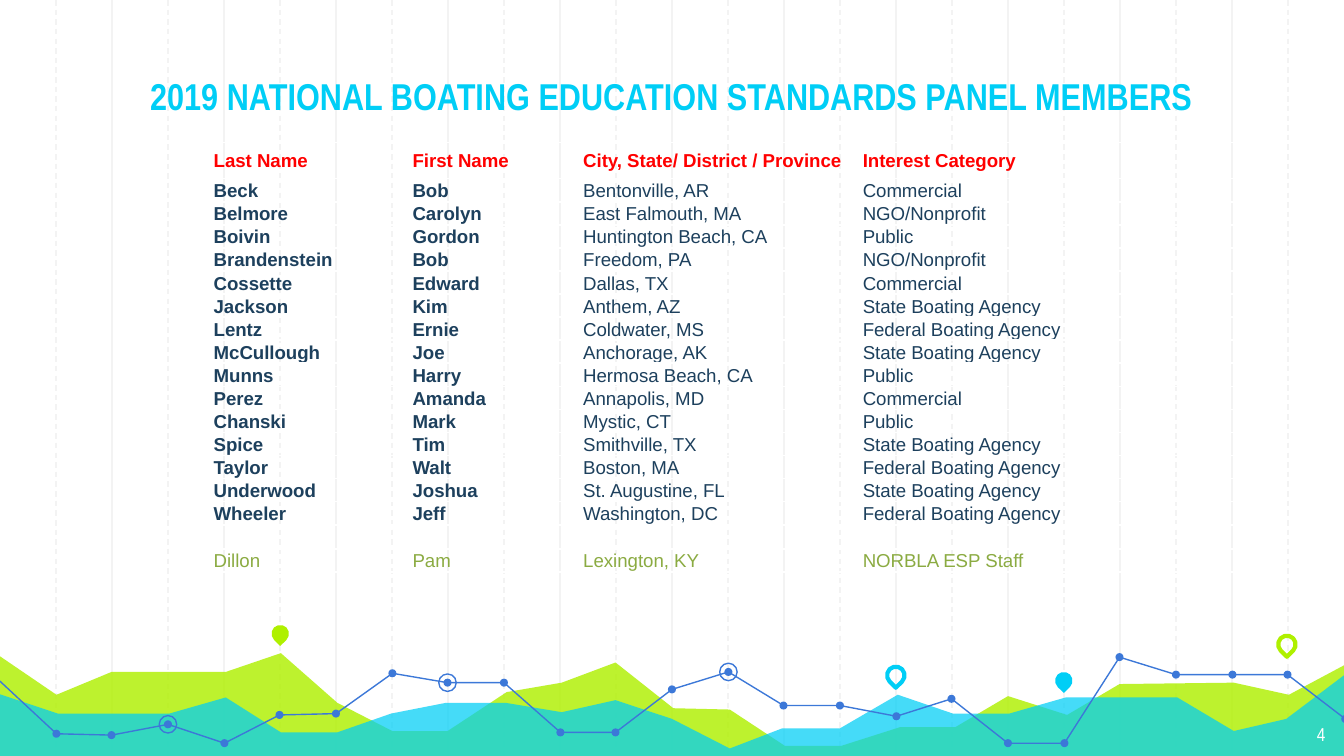
from dataclasses import dataclass

from lxml import etree
from pptx import Presentation
from pptx import util as u
from pptx.dml.color import RGBColor
from pptx.enum import dml, shapes, text
from pptx.oxml.ns import qn


@dataclass(frozen=True)
class Theme:
    cyan: str = "00CEF6"
    lime: str = "AFF000"
    blue: str = "3C78D8"
    grid: str = "F3F3F3"
    white: str = "FFFFFF"
    heading: str = "FF0000"
    member: str = "1D405D"
    staff: str = "8BAB42"
    display_font: str = "Arial Narrow"
    table_font: str = "Arial"
    title_size: int = 20
    small_size: int = 10


theme = Theme()


def paint(shape, fill=None, line=None, width=0.75, alpha=None):
    shape.shadow.inherit = False
    if fill:
        shape.fill.solid()
        shape.fill.fore_color.rgb = RGBColor.from_string(fill)
        if alpha:
            color = shape.fill._xPr.find(qn("a:solidFill"))[0]
            etree.SubElement(color, qn("a:alpha")).set("val", str(alpha * 1000))
    else:
        shape.fill.background()
    if line:
        shape.line.color.rgb = RGBColor.from_string(line)
        shape.line.width = u.Pt(width)
    else:
        shape.line.fill.background()


def style(paragraph, font, size, color, bold=False):
    for run in paragraph.runs:
        run.font.name = font
        run.font.size = u.Pt(size)
        run.font.bold = bold
        run.font.color.rgb = RGBColor.from_string(color)


prs = Presentation()
prs.slide_width = u.Inches(10)
prs.slide_height = u.Inches(10 * 9 / 16)
slide = prs.slides.add_slide(prs.slide_layouts[5])
canvas = slide.shapes

for step in range(1, 24):
    x = u.Inches(10 * step / 24)
    grid_line = canvas.add_connector(shapes.MSO_CONNECTOR.STRAIGHT, x, 0, x, prs.slide_height)
    grid_line.line.color.rgb = RGBColor.from_string(theme.grid)
    grid_line.line.width = u.Pt(0.75)
    if step % 2:
        grid_line.line.dash_style = dml.MSO_LINE.DASH
    etree.SubElement(grid_line._element.spPr, qn("a:effectLst"))

lime_wave = [
    (-0.02, 4.87), (0.42, 5.17), (0.83, 5), (1.68, 5), (2.09, 4.86), (2.51, 5.23),
    (2.92, 5.44), (3.33, 5.44), (3.77, 5.15), (4.18, 5.08), (4.58, 4.93), (5.01, 5.27),
    (5.43, 5.28), (5.84, 5.55), (6.26, 5.55), (6.7, 5.41), (7.11, 5.41), (7.5, 5.18),
    (7.94, 5.32), (8.33, 5.09), (9.18, 5.08), (9.59, 5.17), (10.02, 4.94),
    (10.01, 5.64), (-0.03, 5.64),
]
cyan_wave = [
    (-0.02, 5.16), (0.43, 5.31), (1.26, 5.31), (1.68, 5.19), (2.09, 5.45), (2.51, 5.45),
    (2.91, 5.31), (3.32, 5.23), (3.76, 5.23), (4.18, 5.3), (4.58, 5.21), (5, 5.35),
    (5.43, 5.57), (5.82, 5.42), (6.25, 5.42), (6.68, 5.17), (7.09, 5.31), (7.51, 5.31),
    (7.93, 5.19), (8.76, 5.19), (9.18, 5.44), (9.57, 5.35), (10.02, 5.01),
    (10.02, 5.65), (-0.03, 5.65),
]
trend = [
    (-0.01, 5.06), (0.42, 5.46), (0.83, 5.47), (1.25, 5.39), (1.67, 5.53), (2.08, 5.32),
    (2.5, 5.31), (2.92, 5.01), (3.33, 5.08), (3.75, 5.08), (4.17, 5.45), (4.58, 5.45),
    (5, 5.13), (5.42, 5), (5.83, 5.25), (6.25, 5.25), (6.67, 5.33), (7.08, 5.2),
    (7.5, 5.53), (7.92, 5.53), (8.33, 4.89), (8.75, 5.02), (9.17, 5.02), (9.58, 5.02),
    (10.01, 5.35),
]
outlines = [
    (lime_wave, True, dict(fill=theme.lime, alpha=82)),
    (cyan_wave, True, dict(fill=theme.cyan, alpha=73)),
    (trend[:12], False, dict(line=theme.blue)),
    (trend[11:21], False, dict(line=theme.blue)),
    (trend[20:], False, dict(line=theme.blue)),
]
for points, closed, look in outlines:
    corners = [(u.Inches(x), u.Inches(y)) for x, y in points]
    builder = canvas.build_freeform(*corners[0])
    builder.add_line_segments(corners[1:], close=closed)
    paint(builder.convert_to_shape(), **look)

dots = [(point, 0.06, dict(fill=theme.blue)) for point in trend[1:]]
rings = [(trend[i], 0.13, dict(line=theme.blue)) for i in (3, 8, 13)]
for (x, y), size, look in dots + rings:
    marker = canvas.add_shape(
        shapes.MSO_SHAPE.OVAL, u.Inches(x - size / 2), u.Inches(y - size / 2),
        u.Inches(size), u.Inches(size))
    paint(marker, **look)

pins = [
    (2.02, 4.65, dict(fill=theme.lime)),
    (6.6, 4.96, dict(line=theme.cyan, width=2.25)),
    (7.85, 5, dict(fill=theme.cyan)),
    (9.51, 4.73, dict(line=theme.lime, width=2.25)),
]
for left, top, look in pins:
    pin = canvas.add_shape(
        shapes.MSO_SHAPE.TEAR, u.Inches(left), u.Inches(top), u.Inches(0.13), u.Inches(0.13))
    pin.rotation = 135
    paint(pin, **look)

title = canvas.title
title.left, title.top = u.Inches(0.83), u.Inches(0.36)
title.width, title.height = u.Inches(8.33), u.Inches(0.62)
title.text_frame.text = "2019 NATIONAL BOATING EDUCATION STANDARDS PANEL MEMBERS"
title.text_frame.vertical_anchor = text.MSO_ANCHOR.BOTTOM
style(title.text_frame.paragraphs[0], theme.display_font, theme.title_size, theme.cyan, True)
canvas._spTree.append(title._element)

page_number = canvas.add_textbox(u.Inches(9.36), u.Inches(5.28), u.Inches(0.6), u.Inches(0.34))
page_number.text_frame.text = "4"
page_number.text_frame.paragraphs[0].alignment = text.PP_ALIGN.RIGHT
style(page_number.text_frame.paragraphs[0], theme.display_font, theme.small_size, theme.white)

for frame in (title.text_frame, page_number.text_frame):
    frame.word_wrap = True
    frame.auto_size = text.MSO_AUTO_SIZE.NONE
    frame.margin_left = frame.margin_right = u.Inches(0.1)
    frame.margin_top = frame.margin_bottom = u.Inches(0.1)

panel = [
    ("Last Name", "First Name", "City, State/ District / Province", "Interest Category"),
    ("Beck", "Bob", "Bentonville, AR", "Commercial"),
    ("Belmore", "Carolyn", "East Falmouth, MA", "NGO/Nonprofit"),
    ("Boivin", "Gordon", "Huntington Beach, CA", "Public"),
    ("Brandenstein", "Bob", "Freedom, PA", "NGO/Nonprofit"),
    ("Cossette", "Edward", "Dallas, TX", "Commercial"),
    ("Jackson", "Kim", "Anthem, AZ", "State Boating Agency"),
    ("Lentz", "Ernie", "Coldwater, MS", "Federal Boating Agency"),
    ("McCullough", "Joe", "Anchorage, AK", "State Boating Agency"),
    ("Munns", "Harry", "Hermosa Beach, CA", "Public"),
    ("Perez", "Amanda", "Annapolis, MD", "Commercial"),
    ("Chanski", "Mark", "Mystic, CT", "Public"),
    ("Spice", "Tim", "Smithville, TX", "State Boating Agency"),
    ("Taylor", "Walt", "Boston, MA", "Federal Boating Agency"),
    ("Underwood", "Joshua", "St. Augustine, FL", "State Boating Agency"),
    ("Wheeler", "Jeff", "Washington, DC", "Federal Boating Agency"),
    ("", "", "", ""),
    ("Dillon", "Pam", "Lexington, KY", "NORBLA ESP Staff"),
]
last_row = len(panel) - 1
members = canvas.add_table(
    len(panel), 4, u.Inches(1.58), u.Inches(1.06), u.Inches(7.83), u.Inches(3.2)).table
members.first_row = members.horz_banding = False
for column, width in zip(members.columns, (1.48, 1.27, 2.08, 3)):
    column.width = u.Inches(width)

for r, entries in enumerate(panel):
    members.rows[r].height = u.Inches(0.27) if r == 0 else u.Inches(2.92 / last_row)
    color = {0: theme.heading, last_row: theme.staff}.get(r, theme.member)
    for c, entry in enumerate(entries):
        cell = members.cell(r, c)
        cell.text_frame.text = entry
        cell.vertical_anchor = text.MSO_ANCHOR.BOTTOM if r else text.MSO_ANCHOR.MIDDLE
        cell.margin_left = cell.margin_right = cell.margin_top = u.Inches(0.01)
        cell.margin_bottom = 0
        paragraph = cell.text_frame.paragraphs[0]
        style(paragraph, theme.table_font, theme.small_size, color,
              r == 0 or (c < 2 and r < last_row))
        if not entry:
            end = etree.SubElement(paragraph._p, qn("a:endParaRPr"))
            end.set("sz", str(theme.small_size * 100))
        properties = cell._tc.get_or_add_tcPr()
        for side in ("lnL", "lnR", "lnT", "lnB"):
            border = etree.SubElement(properties, qn(f"a:{side}"), w=str(u.Pt(1)))
            border_fill = etree.SubElement(border, qn("a:solidFill"))
            etree.SubElement(border_fill, qn("a:srgbClr"), val=theme.white)
        cell.fill.background()

prs.save("out.pptx")
